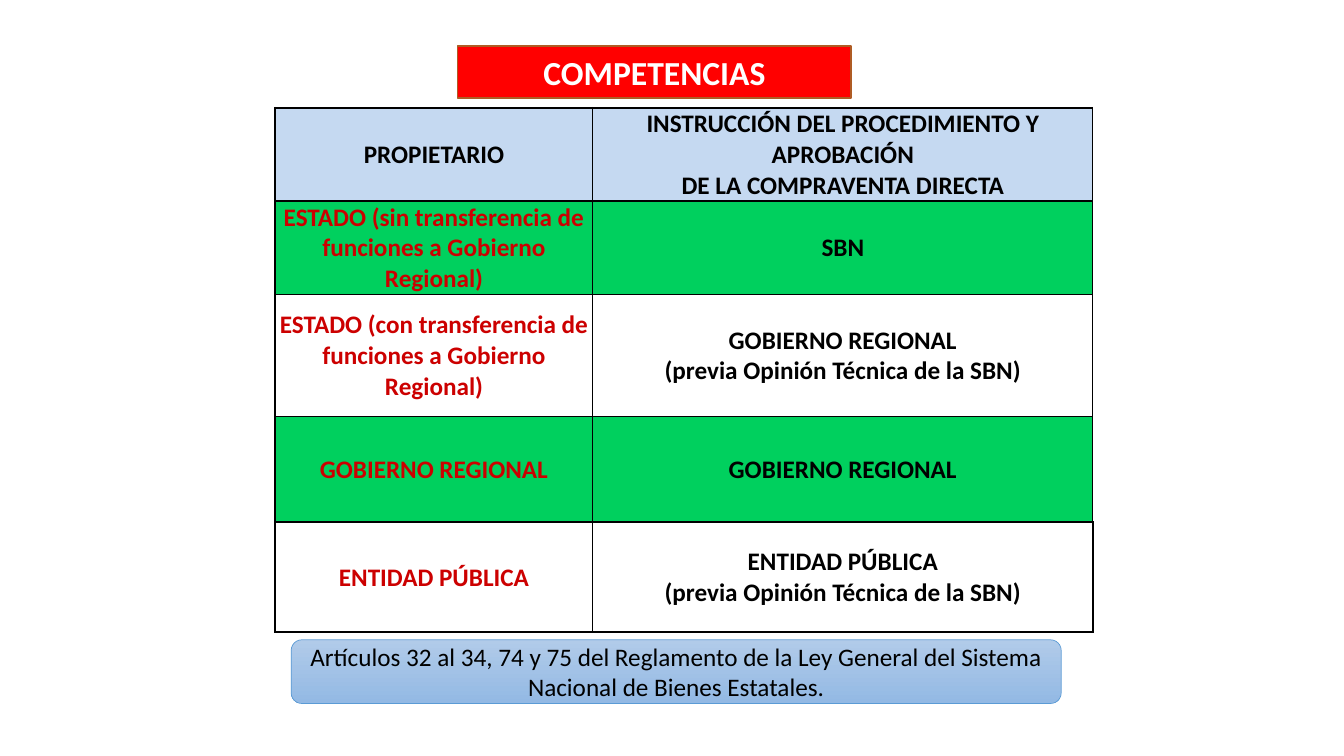
import pptx
import pptx.dml.color
import pptx.enum.shapes
import pptx.enum.text
import pptx.oxml
import pptx.oxml.ns
import pptx.util

Pt = pptx.util.Pt
MIDDLE = pptx.enum.text.MSO_ANCHOR.MIDDLE

COLORS = {
    "white": "FFFFFF", "black": "000000",
    "banner": "FF0000", "banner_line": "AF5C24",
    "header": "C5D9F1", "green": "00D05E", "owner": "CC0000",
    "note_top": "B1CBE9", "note_bottom": "93B9E4", "note_line": "5B9BD5",
}
COLUMN_WIDTHS = [226.8, 357.2]
ROW_HEIGHTS = [65.5, 65.5, 87.1, 75.6, 78.6]
ROWS = [
    ("PROPIETARIO",
     "INSTRUCCIÓN DEL PROCEDIMIENTO Y APROBACIÓN\nDE LA COMPRAVENTA DIRECTA"),
    ("ESTADO (sin transferencia de funciones a Gobierno Regional)", "SBN"),
    ("ESTADO (con transferencia de funciones a Gobierno Regional)",
     "GOBIERNO REGIONAL\n(previa Opinión Técnica de la SBN)"),
    ("GOBIERNO REGIONAL", "GOBIERNO REGIONAL"),
    ("ENTIDAD PÚBLICA", "ENTIDAD PÚBLICA\n(previa Opinión Técnica de la SBN)"),
]
ROW_FILLS = ["header", "green", "white", "green", "white"]


def rgb(name):
    return pptx.dml.color.RGBColor.from_string(COLORS[name])


def write(frame, text, size, color, bold):
    frame.text = text
    frame.word_wrap = True
    frame.vertical_anchor = MIDDLE
    for para in frame.paragraphs:
        para.alignment = pptx.enum.text.PP_ALIGN.CENTER
        for span in para.runs:
            span.font.name = "Calibri"
            span.font.size = Pt(size)
            span.font.bold = bold
            span.font.color.rgb = rgb(color)


def outline(shape, color, width):
    shape.line.color.rgb = rgb(color)
    shape.line.width = Pt(width)


def add_border(cell, side, width):
    properties = cell._tc.get_or_add_tcPr()
    properties.append(pptx.oxml.parse_xml(
        f'<a:ln{side} {pptx.oxml.ns.nsdecls("a")} w="{int(Pt(width))}">'
        f'<a:solidFill><a:srgbClr val="{COLORS["black"]}"/></a:solidFill>'
        f'</a:ln{side}>'))


def add_banner(page, left, top, width, height):
    banner = page.shapes.title
    banner.left, banner.top = Pt(left), Pt(top)
    banner.width, banner.height = Pt(width), Pt(height)
    banner.fill.solid()
    banner.fill.fore_color.rgb = rgb("banner")
    outline(banner, "banner_line", 1)
    write(banner.text_frame, "COMPETENCIAS", 24, "white", True)
    banner.text_frame.auto_size = pptx.enum.text.MSO_AUTO_SIZE.NONE


def add_owner_table(page, left, top):
    table = page.shapes.add_table(
        len(ROWS), len(COLUMN_WIDTHS), Pt(left), Pt(top),
        Pt(sum(COLUMN_WIDTHS)), Pt(sum(ROW_HEIGHTS))).table
    for column, width in zip(table.columns, COLUMN_WIDTHS):
        column.width = Pt(width)
    last = len(ROWS) - 1
    for i, texts in enumerate(ROWS):
        table.rows[i].height = Pt(ROW_HEIGHTS[i])
        for j, text in enumerate(texts):
            cell = table.cell(i, j)
            cell.margin_left = cell.margin_right = cell.margin_top = Pt(0.72)
            cell.margin_bottom = 0
            color = "owner" if i > 0 and j == 0 else "black"
            write(cell.text_frame, text, 18, color, True)
            cell.vertical_anchor = MIDDLE
            # Thick lines on the left, the top and around the last row
            thick = {"L": j == 0, "R": i == last and j == 1,
                     "T": i in (0, last), "B": i >= last - 1}
            for side, is_thick in thick.items():
                add_border(cell, side, 1.5 if is_thick else 1)
            cell.fill.solid()
            cell.fill.fore_color.rgb = rgb(ROW_FILLS[i])


def add_legal_note(page, left, top, width, height):
    note = page.shapes.add_shape(
        pptx.enum.shapes.MSO_SHAPE.ROUNDED_RECTANGLE,
        Pt(left), Pt(top), Pt(width), Pt(height))
    note.shadow.inherit = False
    note.fill.gradient()
    note.fill.gradient_angle = 270
    for stop, color in zip(note.fill.gradient_stops, ("note_top", "note_bottom")):
        stop.color.rgb = rgb(color)
    outline(note, "note_line", 0.5)
    write(note.text_frame,
          "Artículos 32 al 34, 74 y 75 del Reglamento de la Ley General "
          "del Sistema Nacional de Bienes Estatales.", 18, "black", False)


def main():
    deck = pptx.Presentation()
    deck.slide_width, deck.slide_height = Pt(960), Pt(540)
    page = deck.slides.add_slide(deck.slide_layouts.get_by_name("Title Only"))
    add_banner(page, 327, 33, 281, 37)
    add_owner_table(page, 196.6, 77)
    add_legal_note(page, 208, 457, 550, 45.5)
    deck.save("out.pptx")


if __name__ == "__main__":
    main()
